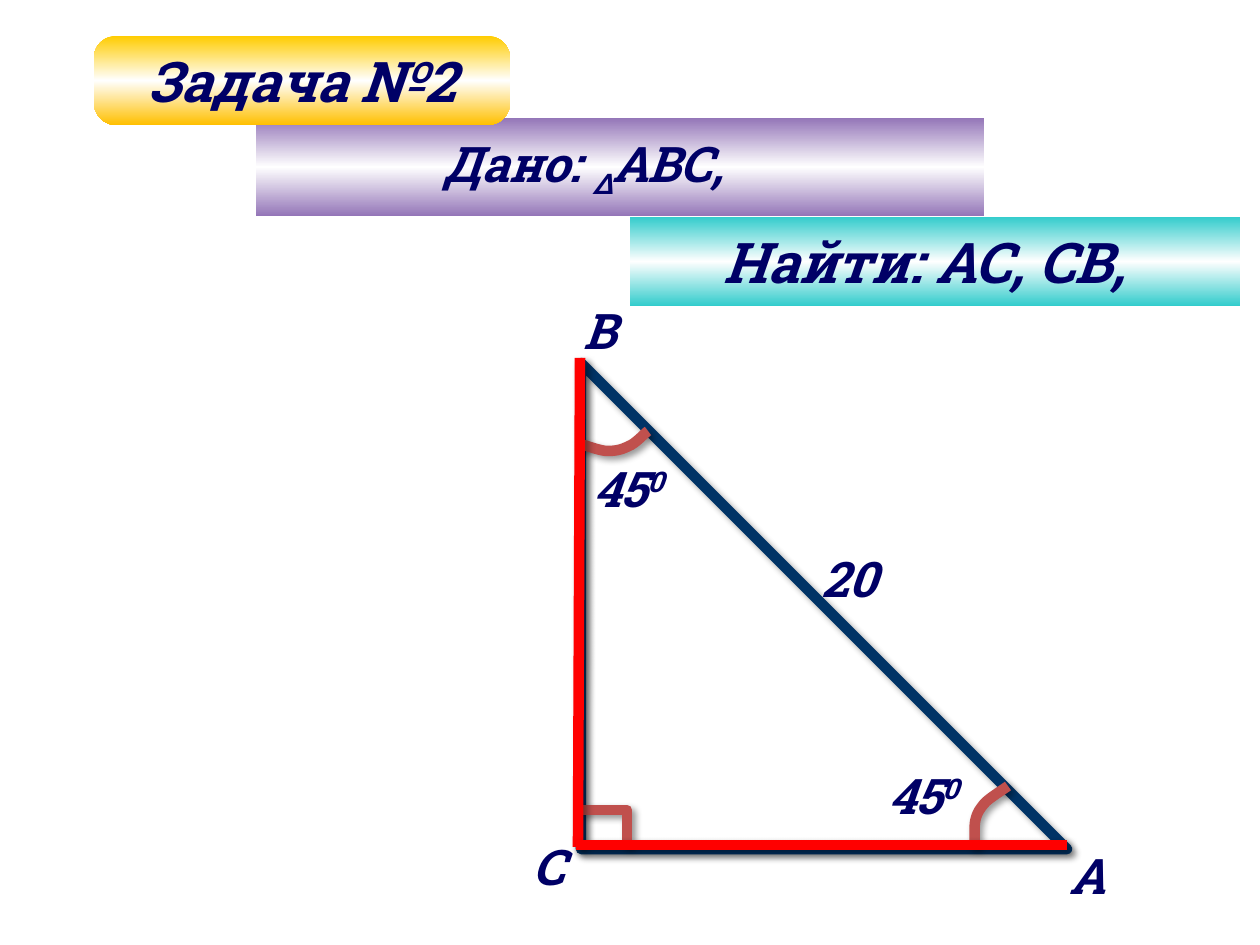
from copy import deepcopy

from lxml.etree import SubElement
from pptx import Presentation
from pptx.dml.color import RGBColor
from pptx.enum.shapes import MSO_CONNECTOR, MSO_SHAPE
from pptx.enum.text import MSO_ANCHOR, PP_ALIGN
from pptx.oxml.ns import qn
from pptx.util import Emu, Pt

PX = 914400 / 126
THEME = {
    "font": "Roboto Slab",
    "ink": "000066",
    "hypotenuse": "003366",
    "leg": "FF0000",
    "angle": "C0504D",
    "stroke": 6,
    "label": 28,
    "heading": 32,
    "teal": ("33CCCC", "FFFFFF", "33CCCC"),
    "purple": ("9476B8", "FFFFFF", "9476B8"),
    "gold": ("FFCC00", "FFFFFF", "FFC000"),
}


def write(frame, parts, size):
    """Write (text, baseline percent) parts as one styled line."""
    line = frame.paragraphs[0]
    for text, baseline in parts:
        run = line.add_run()
        run.text = text
        run.font.name = THEME["font"]
        run.font.size = Pt(size)
        run.font.bold = run.font.italic = True
        run.font.color.rgb = RGBColor.from_string(THEME["ink"])
        if baseline:
            run.font._element.set("baseline", str(baseline * 1000))
    return line


def outline(figure, color):
    """Give a figure a thick line and a soft shadow."""
    figure.line.color.rgb = RGBColor.from_string(color)
    figure.line.width = Pt(THEME["stroke"])
    properties = figure.element.spPr
    effects = SubElement(properties, qn("a:effectLst"))
    shadow = SubElement(effects, qn("a:outerShdw"), blurRad=str(Pt(4)),
                        dist=str(Pt(3)), dir="2700000", rotWithShape="0")
    black = SubElement(shadow, qn("a:srgbClr"), val="000000")
    SubElement(black, qn("a:alpha"), val="40000")


deck = Presentation()
deck.slide_width, deck.slide_height = Emu(round(1260 * PX)), Emu(round(945 * PX))
shapes = deck.slides.add_slide(deck.slide_layouts[6]).shapes

# Triangle with the hypotenuse AB
triangle = shapes.add_shape(MSO_SHAPE.RIGHT_TRIANGLE,
                            *(round(n * PX) for n in (581, 363, 486, 486)))
triangle.fill.background()
outline(triangle, THEME["hypotenuse"])

# Angle marks: arcs at B and A as chains of cubic curves, then the right angle at C
arcs = [
    [(648, 431), (645, 433), (635, 444), (629, 446), (621, 450), (616, 451),
     (607, 451), (600, 451), (585, 445), (580, 444)],
    [(975, 848), (975, 843), (974, 830), (975, 823), (976, 815), (979, 810),
     (984, 804), (989, 798), (1003, 790), (1008, 786)],
]
angle_marks = []
for arc in arcs:
    points = [arc[0]]
    for first in range(0, len(arc) - 1, 3):
        for step in range(1, 9):
            t = step / 8
            weights = ((1 - t) ** 3, 3 * t * (1 - t) ** 2, 3 * t * t * (1 - t), t ** 3)
            points.append(tuple(
                sum(w * p[axis] for w, p in zip(weights, arc[first:first + 4]))
                for axis in (0, 1)))
    angle_marks.append(points)
angle_marks.append([(581, 810), (627, 810), (627, 847)])

for points in angle_marks:
    emu_points = [(round(x * PX), round(y * PX)) for x, y in points]
    builder = shapes.build_freeform(*emu_points[0])
    builder.add_line_segments(emu_points[1:], close=False)
    angle_mark = builder.convert_to_shape()
    angle_mark.fill.background()
    outline(angle_mark, THEME["angle"])

# Legs BC and CA
for ends in [(580, 358, 578, 847), (576, 845, 1067, 845)]:
    leg = shapes.add_connector(MSO_CONNECTOR.STRAIGHT, *(round(n * PX) for n in ends))
    outline(leg, THEME["leg"])

# Vertex, side and angle labels
labels = [
    (1057, 839, 58, True, [("А", 0)]),
    (571, 294, 58, True, [("B", 0)]),
    (520, 830, 58, True, [("C", 0)]),
    (809, 542, 92, False, [("20", 0)]),
    (581, 452, 115, False, [("45", 0), ("0", 30)]),
    (876, 759, 115, False, [("45", 0), ("0", 30)]),
]
for left, top, width, wraps, parts in labels:
    label = shapes.add_textbox(*(round(n * PX) for n in (left, top, width, 72)))
    label.text_frame.word_wrap = wraps
    write(label.text_frame, parts, THEME["label"])

# Banners; the extra right inset moves the centred text to the left
banners = [
    (MSO_SHAPE.RECTANGLE, (630, 217, 610, 89), "teal", "heading", 20,
     [("Найти: АС, СВ,", 0)]),
    (MSO_SHAPE.RECTANGLE, (256, 118, 728, 98), "purple", "label", 72,
     [("Дано: ", 0), ("Δ", -25), ("АВС,", 0)]),
    (MSO_SHAPE.ROUNDED_RECTANGLE, (94, 36, 416, 89), "gold", "heading", 0,
     [("Задача №2", 0)]),
]
for kind, box, palette, size, inset, parts in banners:
    banner = shapes.add_shape(kind, *(round(n * PX) for n in box))
    if kind == MSO_SHAPE.ROUNDED_RECTANGLE:
        banner.adjustments[0] = 0.25
    banner.shadow.inherit = False
    banner.line.fill.background()
    banner.fill.gradient()
    banner.fill.gradient_angle = 270
    stop_list = banner.element.spPr.find(".//" + qn("a:gsLst"))
    stop_list.append(deepcopy(stop_list[0]))
    for stop, position, color in zip(banner.fill.gradient_stops, (0, 0.5, 1),
                                     THEME[palette]):
        stop.position = position
        stop.color.rgb = RGBColor.from_string(color)
    frame = banner.text_frame
    frame.word_wrap = True
    frame.vertical_anchor = MSO_ANCHOR.MIDDLE
    frame.margin_right = Emu(round((13 + inset) * PX))
    write(frame, parts, THEME[size]).alignment = PP_ALIGN.CENTER

deck.save("out.pptx")
